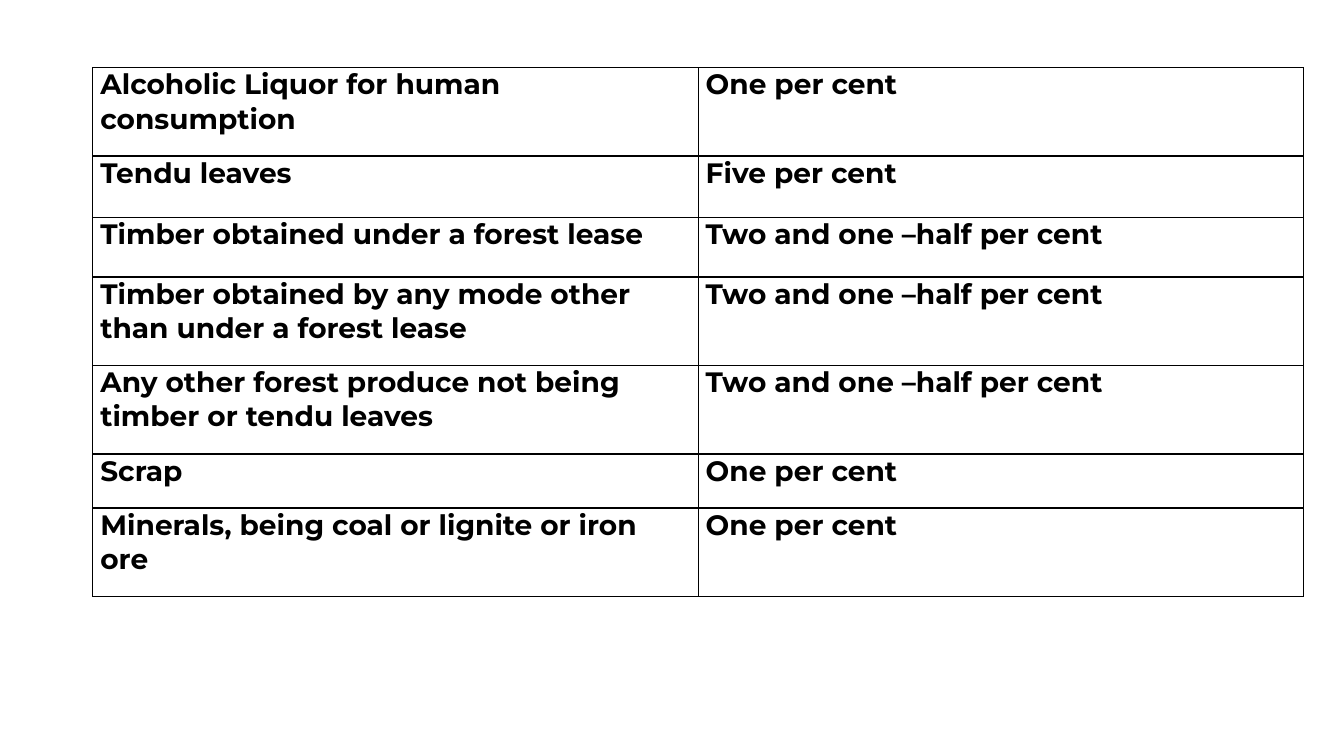
from dataclasses import dataclass

from lxml import etree
from pptx import Presentation
from pptx import util as u
from pptx.dml import color
from pptx.enum import text
from pptx.oxml import ns
from pptx.table import _Cell

BLACK = "000000"
TABLE_LEFT, TABLE_TOP = 66.3, 48.3
COLUMN_WIDTH = 432.4
TWO_LINE_HEIGHT = 63.2

CELL_FORMAT = {
    "margin_left": u.Pt(5.4),
    "margin_right": u.Pt(5.4),
    "margin_top": u.Pt(0),
    "margin_bottom": u.Pt(0),
    "vertical_anchor": text.MSO_ANCHOR.TOP,
}
FONT_FORMAT = {"name": "Montserrat", "size": u.Pt(20), "bold": True}


@dataclass
class RateRow:
    goods: str
    rate: str
    height: float = TWO_LINE_HEIGHT


RATE_ROWS = [
    RateRow("Alcoholic Liquor for human consumption", "One per cent"),
    RateRow("Tendu leaves", "Five per cent", 43.7),
    RateRow("Timber obtained under a forest lease", "Two and one –half per cent", 42.7),
    RateRow("Timber obtained by any mode other than under a forest lease",
            "Two and one –half per cent"),
    RateRow("Any other forest produce not being timber or tendu leaves",
            "Two and one –half per cent"),
    RateRow("Scrap", "One per cent", 38.7),
    RateRow("Minerals, being coal or lignite or iron ore", "One per cent"),
]


def rgb(value: str) -> color.RGBColor:
    return color.RGBColor.from_string(value)


def apply_format(target: object, values: dict) -> None:
    for name, value in values.items():
        setattr(target, name, value)


def add_borders(cell: _Cell, line_color: str, width: float) -> None:
    properties = cell._tc.get_or_add_tcPr()
    for position, side in enumerate(("lnL", "lnR", "lnT", "lnB")):
        line = etree.Element(ns.qn(f"a:{side}"), w=str(u.Pt(width)))
        fill = etree.SubElement(line, ns.qn("a:solidFill"))
        etree.SubElement(fill, ns.qn("a:srgbClr"), val=line_color)
        # Borders come before the cell fill
        properties.insert(position, line)


def write_cell(cell: _Cell, wording: str) -> None:
    apply_format(cell, CELL_FORMAT)
    cell.fill.background()
    add_borders(cell, BLACK, 1)
    paragraph = cell.text_frame.paragraphs[0]
    paragraph.alignment = text.PP_ALIGN.LEFT
    run = paragraph.add_run()
    run.text = wording
    apply_format(run.font, FONT_FORMAT)
    run.font.color.rgb = rgb(BLACK)


def main() -> None:
    presentation = Presentation()
    presentation.slide_width = u.Pt(960)
    presentation.slide_height = u.Pt(540)
    slide = presentation.slides.add_slide(presentation.slide_layouts[6])

    # Table of goods and their rates
    table = slide.shapes.add_table(
        len(RATE_ROWS), 2, u.Pt(TABLE_LEFT), u.Pt(TABLE_TOP),
        u.Pt(2 * COLUMN_WIDTH), u.Pt(sum(row.height for row in RATE_ROWS)),
    ).table
    apply_format(table, {"first_row": False, "horz_banding": False})
    for column in table.columns:
        column.width = u.Pt(COLUMN_WIDTH)

    # Row heights and wording
    for table_row, rate_row in zip(table.rows, RATE_ROWS):
        table_row.height = u.Pt(rate_row.height)
        for cell, wording in zip(table_row.cells, (rate_row.goods, rate_row.rate)):
            write_cell(cell, wording)

    presentation.save("out.pptx")


if __name__ == "__main__":
    main()
